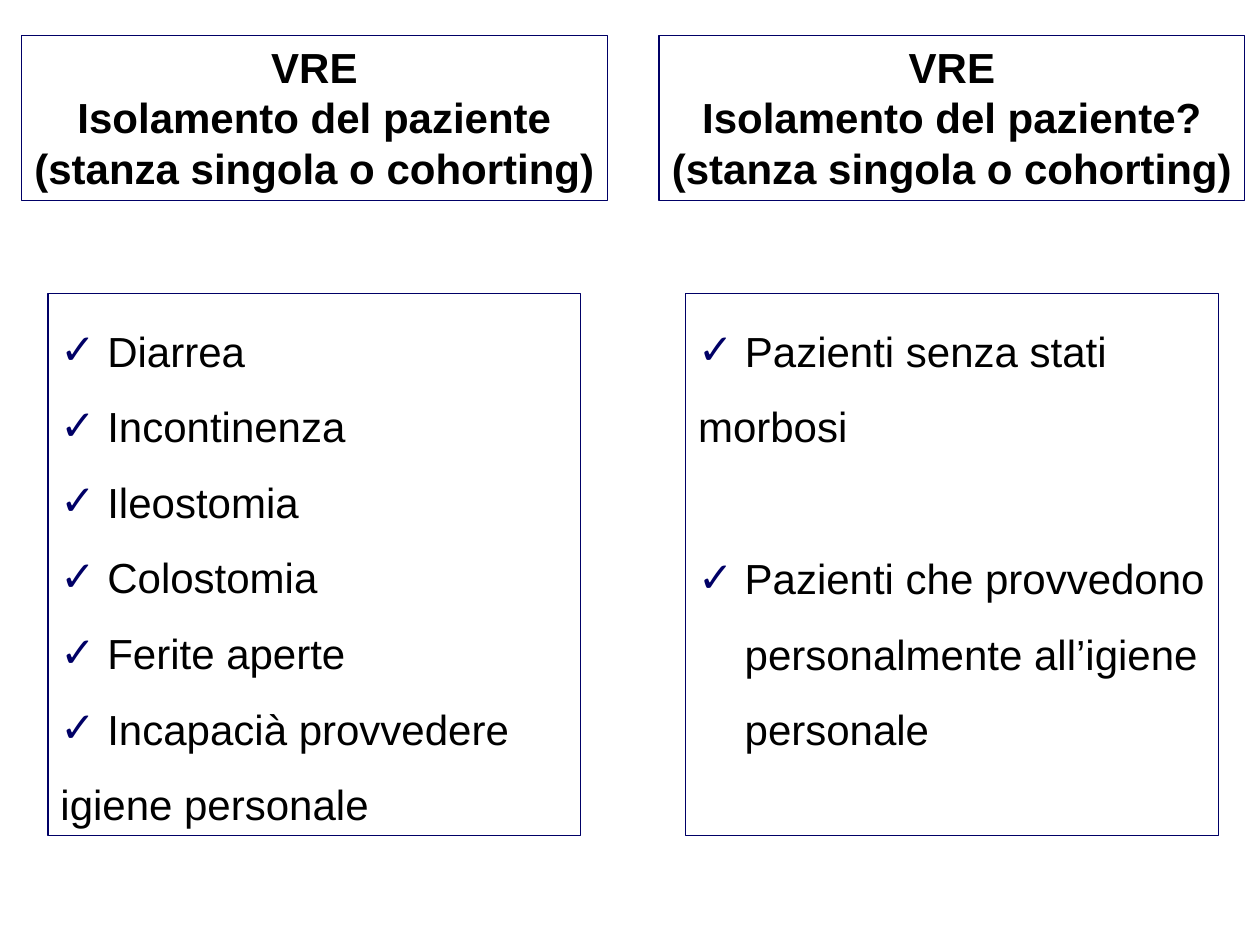
from lxml import etree
from pptx import Presentation
from pptx.dml.color import RGBColor
from pptx.enum.text import MSO_ANCHOR, MSO_AUTO_SIZE, PP_ALIGN
from pptx.oxml.ns import qn
from pptx.util import Inches, Pt

NAVY = RGBColor(0x00, 0x00, 0x66)
BLACK = RGBColor(0x00, 0x00, 0x00)
TOP, CENTER, LEFT = MSO_ANCHOR.TOP, PP_ALIGN.CENTER, PP_ALIGN.LEFT
NO_AUTOFIT = MSO_AUTO_SIZE.NONE

COMPARISON_LAYOUT = 4
COLUMN_LEFT, COLUMN_STEP, COLUMN_WIDTH = 0.17, 5.06, 4.65
HEADING_TOP, HEADING_HEIGHT = 0.28, 1.31
LIST_TOP, LIST_HEIGHT, LIST_INSET = 2.33, 4.3, 0.21
HANGING = 0.37
ROW_GAP = 43.5

# Each list item: text, hanging indent in inches, space before in points
COLUMNS = [
    ("Isolamento del paziente",
     [(" Diarrea", 0, 0), (" Incontinenza", 0, 0), (" Ileostomia", 0, 0),
      (" Colostomia", 0, 0), (" Ferite aperte", 0, 0),
      (" Incapacià provvedere igiene personale", 0, 0)]),
    ("Isolamento del paziente?",
     [(" Pazienti senza stati morbosi", 0, 0),
      ("Pazienti che provvedono personalmente all’igiene personale",
       HANGING, ROW_GAP)]),
]


def frame_box(box, left, top, width, height):
    """Place a placeholder and give it the navy outline."""
    box.left, box.top = Inches(left), Inches(top)
    box.width, box.height = Inches(width), Inches(height)
    box.line.color.rgb = NAVY
    box.line.width = Pt(0.75)
    box.text_frame.auto_size = NO_AUTOFIT
    box.text_frame.vertical_anchor = TOP


def format_paragraph(para, align, spacing, before, bold):
    para.alignment = align
    para.line_spacing = spacing
    para.space_before = Pt(before)
    para.space_after = Pt(0)
    for span in para.runs:
        span.font.name = "Arial"
        span.font.size = Pt(24)
        span.font.bold = bold
        span.font.color.rgb = BLACK


def add_check(para, hanging):
    props = para._p.get_or_add_pPr()
    props.set("marL", str(Inches(hanging)))
    props.set("indent", str(-Inches(hanging)))
    color = etree.SubElement(props, qn("a:buClr"))
    etree.SubElement(color, qn("a:srgbClr"), val=str(NAVY))
    etree.SubElement(props, qn("a:buChar"), char="✓")


def fill_heading(box, subject):
    frame = box.text_frame
    frame.word_wrap = False
    frame.text = "\n".join(["VRE", subject, "(stanza singola o cohorting)"])
    for para in frame.paragraphs:
        format_paragraph(para, CENTER, 1.0, 0, True)


def fill_list(box, items):
    frame = box.text_frame
    frame.word_wrap = True
    frame.text = "\n".join(text for text, _, _ in items)
    for para, (_, hanging, before) in zip(frame.paragraphs, items):
        add_check(para, hanging)
        format_paragraph(para, LEFT, 1.5, before, False)


def build_column(heading, listing, left, subject, items):
    frame_box(heading, left, HEADING_TOP, COLUMN_WIDTH, HEADING_HEIGHT)
    fill_heading(heading, subject)
    frame_box(listing, left + LIST_INSET, LIST_TOP,
              COLUMN_WIDTH - 2 * LIST_INSET, LIST_HEIGHT)
    fill_list(listing, items)


def main():
    deck = Presentation()
    deck.slide_width, deck.slide_height = Inches(10), Inches(7.5)
    page = deck.slides.add_slide(deck.slide_layouts[COMPARISON_LAYOUT])
    title, *boxes = list(page.placeholders)[:5]
    title.element.getparent().remove(title.element)
    for index, (subject, items) in enumerate(COLUMNS):
        heading, listing = boxes[2 * index:2 * index + 2]
        build_column(heading, listing, COLUMN_LEFT + index * COLUMN_STEP,
                     subject, items)
    deck.save("out.pptx")


if __name__ == "__main__":
    main()
